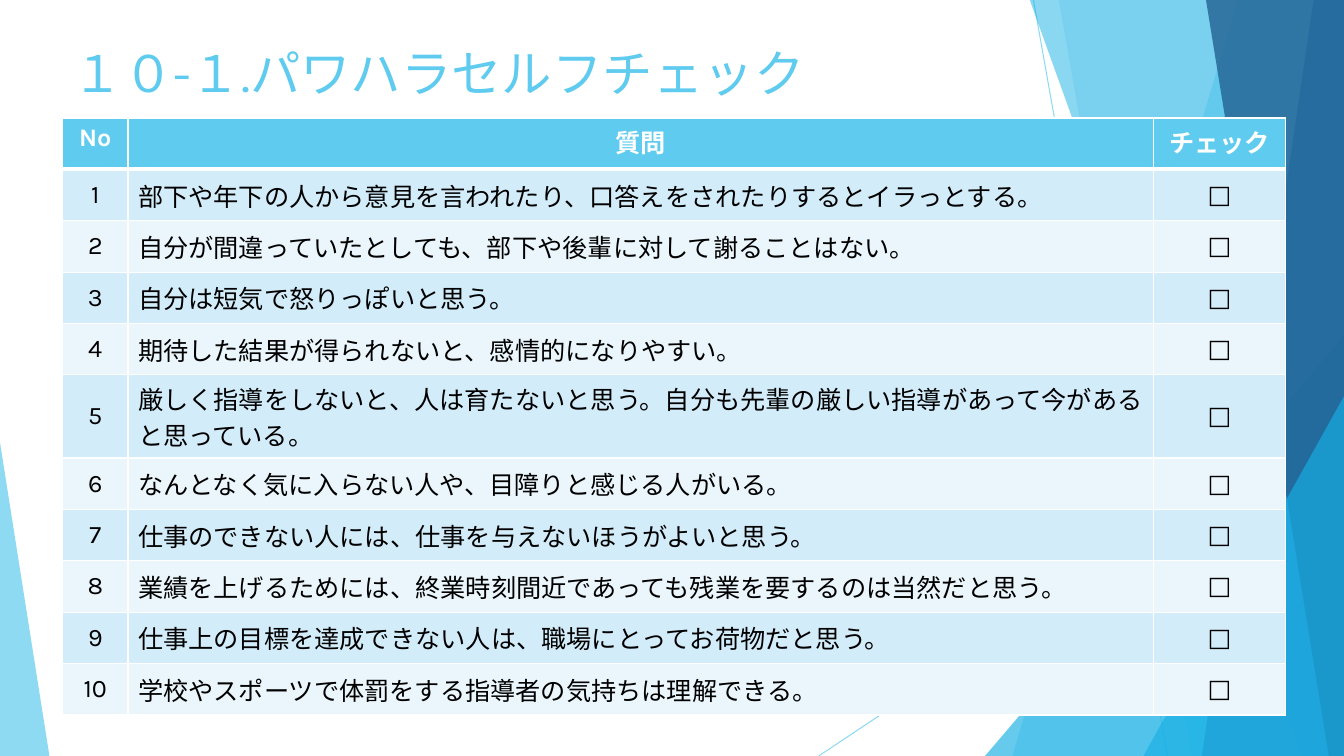
"""Build the harassment self-check slide."""
import dataclasses
import typing

import pptx
import pptx.dml.color
import pptx.enum.shapes
import pptx.enum.text
import pptx.oxml
import pptx.oxml.ns
import pptx.util

Inches = pptx.util.Inches
Pt = pptx.util.Pt
ALIGN = pptx.enum.text.PP_ALIGN
ANCHOR = pptx.enum.text.MSO_ANCHOR
WIDE, HIGH = 13.33, 7.5
FONT = "Karla"
SKY, AZURE, WHITE, BLACK = "5FCBEF", "17B0E4", "FFFFFF", "000000"
BANDS = ("EAF6FC", "D2ECF9")
COLS = (0.65, 10.17, 1.31)
HEADS = ("No", "質問", "チェック")
ASKS = (
    "部下や年下の人から意見を言われたり、口答えをされたりするとイラっとする。",
    "自分が間違っていたとしても、部下や後輩に対して謝ることはない。",
    "自分は短気で怒りっぽいと思う。",
    "期待した結果が得られないと、感情的になりやすい。",
    "厳しく指導をしないと、人は育たないと思う。自分も先輩の厳しい指導があって今があると思っている。",
    "なんとなく気に入らない人や、目障りと感じる人がいる。",
    "仕事のできない人には、仕事を与えないほうがよいと思う。",
    "業績を上げるためには、終業時刻間近であっても残業を要するのは当然だと思う。",
    "仕事上の目標を達成できない人は、職場にとってお荷物だと思う。",
    "学校やスポーツで体罰をする指導者の気持ちは理解できる。",
)
LONG = 5


@dataclasses.dataclass
class Ray:
    start: tuple[float, float]
    end: tuple[float, float]


@dataclasses.dataclass
class Blade:
    top: float
    base: float
    color: str
    alpha: int


@dataclasses.dataclass
class Peak:
    left: float
    top: float
    width: float
    tip: float
    color: str
    alpha: int


DECOR = (
    Ray((10.25, 0), (11.58, HIGH)),
    Ray((WIDE, 4.03), (8.12, HIGH)),
    Blade(12.28, 10.04, SKY, 36),
    Blade(10.5, 11.82, SKY, 20),
    Peak(9.77, 3.33, 3.56, 1, AZURE, 66),
    Blade(10.21, 12.91, AZURE, 50),
    Blade(13.03, 11.92, "2E83C3", 70),
    Blade(11.96, 13.18, "226292", 80),
    Peak(11.34, 3.93, 1.99, 1, AZURE, 66),
    Peak(0, 4.39, 0.49, 0, SKY, 70),
)


def rgb(code: str) -> pptx.dml.color.RGBColor:
    """Turn a hex string into a colour."""
    return pptx.dml.color.RGBColor.from_string(code)


def fade(shape: typing.Any, alpha: int) -> None:
    """Set the opacity of a shape's colour in percent."""
    for node in shape.element.iter(pptx.oxml.ns.qn("a:srgbClr")):
        pptx.oxml.ns.qn("a:alpha")
        node.append(pptx.oxml.parse_xml(
            f'<a:alpha {pptx.oxml.ns.nsdecls("a")} val="{alpha * 1000}"/>'))


def tint(shape: typing.Any, color: str, alpha: int) -> None:
    """Give a shape a translucent fill without line or shadow."""
    shape.shadow.inherit = False
    shape.fill.solid()
    shape.fill.fore_color.rgb = rgb(color)
    shape.line.fill.background()
    fade(shape, alpha)


def draw_ray(shapes: typing.Any, ray: Ray) -> None:
    """Draw a thin translucent line."""
    ends = [Inches(v) for v in (*ray.start, *ray.end)]
    line = shapes.add_connector(pptx.enum.shapes.MSO_CONNECTOR.STRAIGHT, *ends)
    line.line.color.rgb = rgb(SKY)
    line.line.width = Pt(0.75)
    fade(line, 70)
    line.element.spPr.append(pptx.oxml.parse_xml(
        f'<a:effectLst {pptx.oxml.ns.nsdecls("a")}/>'))


def draw_blade(shapes: typing.Any, blade: Blade) -> None:
    """Draw a full-height band that reaches the right edge."""
    spots = ((WIDE, -0.01), (WIDE, HIGH), (blade.base, HIGH))
    form = shapes.build_freeform(Inches(blade.top), Inches(-0.01))
    form.add_line_segments([(Inches(x), Inches(y)) for x, y in spots])
    tint(form.convert_to_shape(), blade.color, blade.alpha)


def draw_peak(shapes: typing.Any, peak: Peak) -> None:
    """Draw a triangle that stands on the bottom edge."""
    shape = shapes.add_shape(
        pptx.enum.shapes.MSO_SHAPE.ISOSCELES_TRIANGLE,
        Inches(peak.left), Inches(peak.top),
        Inches(peak.width), Inches(HIGH - peak.top))
    shape.adjustments[0] = peak.tip
    tint(shape, peak.color, peak.alpha)


def write(para: typing.Any, text: str, size: int, color: str, bold: bool = False) -> None:
    """Add one formatted run to a paragraph."""
    run = para.add_run()
    run.text = text
    run.font.name = FONT
    run.font.size = Pt(size)
    run.font.bold = bold
    run.font.color.rgb = rgb(color)


def edge(cell: typing.Any, row: int) -> None:
    """Draw white cell borders, thick below the header."""
    props = cell._tc.get_or_add_tcPr()
    thick = {(0, "B"), (1, "T")}
    for side in "LRTB":
        width = Pt(3 if (row, side) in thick else 1)
        props.append(pptx.oxml.parse_xml(
            f'<a:ln{side} {pptx.oxml.ns.nsdecls("a")} w="{width}"><a:solidFill>'
            f'<a:srgbClr val="{WHITE}"/></a:solidFill></a:ln{side}>'))


def fill_cell(cell: typing.Any, row: int, col: int, text: str) -> None:
    """Format one table cell and write its text."""
    head = row == 0
    edge(cell, row)
    cell.fill.solid()
    cell.fill.fore_color.rgb = rgb(SKY if head else BANDS[row % 2])
    cell.vertical_anchor = ANCHOR.TOP if head else ANCHOR.MIDDLE
    para = cell.text_frame.paragraphs[0]
    para.alignment = ALIGN.LEFT if col == 1 and not head else ALIGN.CENTER
    write(para, text, 18, WHITE if head else BLACK, head)


def draw_table(shapes: typing.Any) -> None:
    """Draw the checklist."""
    rows = [HEADS] + [(str(n), ask, "□") for n, ask in enumerate(ASKS, 1)]
    table = shapes.add_table(
        len(rows), len(COLS), Inches(0.62), Inches(1.17),
        Inches(sum(COLS)), Inches(5.83)).table
    for col, width in enumerate(COLS):
        table.columns[col].width = Inches(width)
    for row, texts in enumerate(rows):
        table.rows[row].height = Inches(0.76 if row == LONG else 0.51)
        for col, text in enumerate(texts):
            fill_cell(table.cell(row, col), row, col, text)


def draw_title(title: typing.Any) -> None:
    """Place and write the title."""
    title.left, title.top = Inches(0.62), Inches(0.34)
    title.width, title.height = Inches(9.4), Inches(0.75)
    frame = title.text_frame
    frame.auto_size = pptx.enum.text.MSO_AUTO_SIZE.NONE
    frame.vertical_anchor = ANCHOR.MIDDLE
    para = frame.paragraphs[0]
    para.alignment = ALIGN.LEFT
    write(para, "１０-１.パワハラセルフチェック", 36, SKY)


def main() -> None:
    """Build and save the deck."""
    deck = pptx.Presentation()
    deck.slide_width, deck.slide_height = Inches(WIDE), Inches(HIGH)
    slide = deck.slides.add_slide(deck.slide_layouts[5])
    tools = {Ray: draw_ray, Blade: draw_blade, Peak: draw_peak}
    for part in DECOR:
        tools[type(part)](slide.shapes, part)
    draw_title(slide.shapes.title)
    draw_table(slide.shapes)
    deck.save("out.pptx")


if __name__ == "__main__":
    main()
